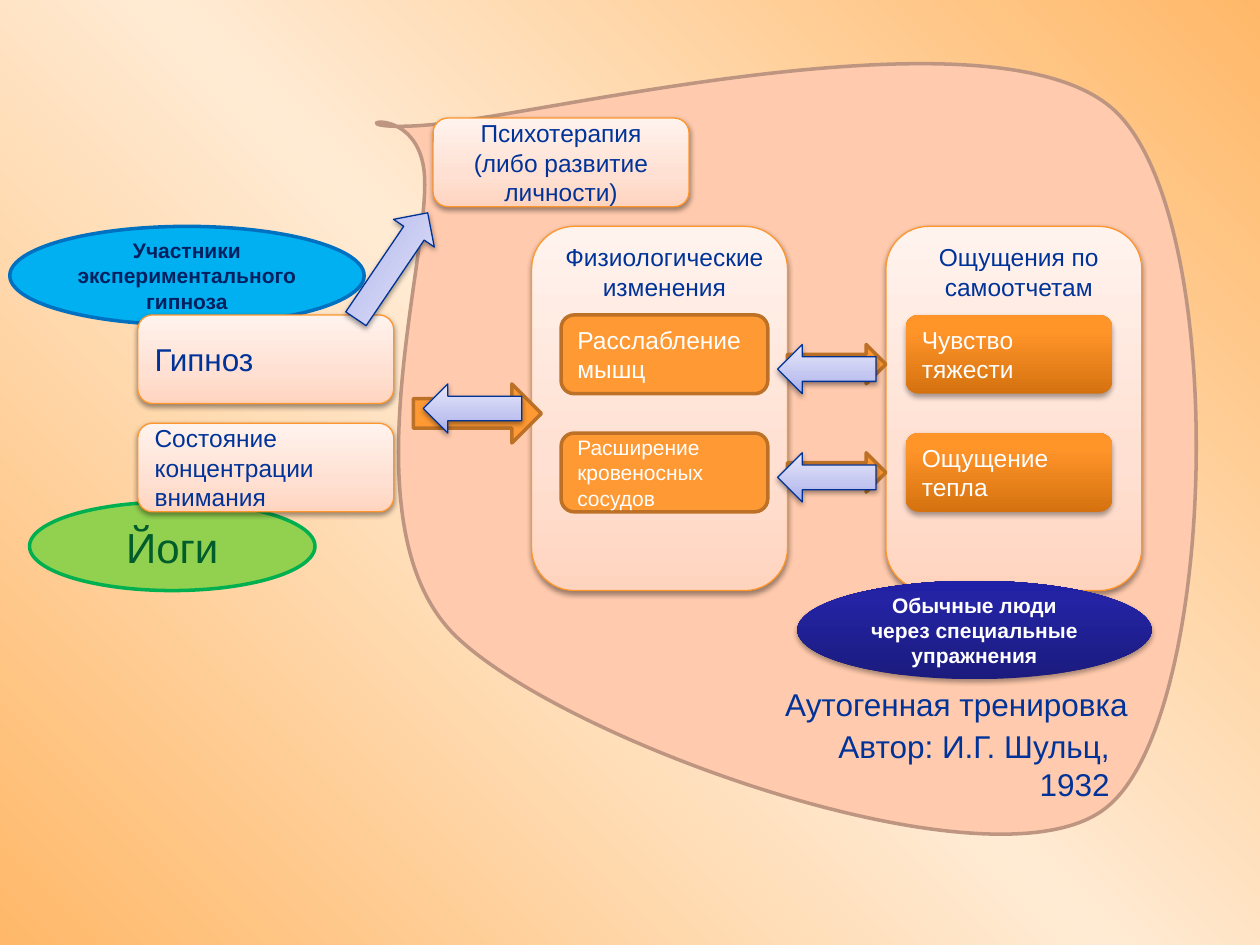
"""Build a slide relating hypnosis, concentration and autogenic training."""
from copy import deepcopy
from dataclasses import dataclass
from typing import Optional

from lxml import etree
from pptx import Presentation
from pptx import util as u
from pptx.dml.color import RGBColor
from pptx.enum import shapes, text
from pptx.oxml import ns

COLS = 128
HUES = {
    "sky": "00B0F0", "blue": "0070C0", "navy": "002060", "ink": "003399",
    "lime": "92D050", "green": "00B050", "pine": "005C2A",
    "orange": "FF9933", "rust": "BD7126", "amber": "FE962D",
    "peach": "FFCAAD", "clay": "BD9580", "edge": "003296",
    "white": "FFFFFF", "black": "000000",
}
GRADS = {
    "back": ((0, "FFB869"), (50, "FFEBD4"), (100, "FFB869")),
    "cream": ((0, "FFD4BF"), (35, "FFE0D2"), (100, "FFF3EE")),
    "fire": ((0, "D5720F"), (80, "FF9429"), (100, "FF952B")),
    "lilac": ((0, "A5ABEB"), (35, "C1C5F0"), (100, "E7E8FA")),
    "deep": ((0, "1B1B7E"), (80, "2323A3"), (100, "2020A6")),
}
KIND = shapes.MSO_SHAPE
OVAL, CARD = KIND.OVAL, KIND.ROUNDED_RECTANGLE
LEFT, RIGHT = KIND.LEFT_ARROW, KIND.RIGHT_ARROW
ALIGN = {"l": text.PP_ALIGN.LEFT, "c": text.PP_ALIGN.CENTER, "r": text.PP_ALIGN.RIGHT}


@dataclass(frozen=True)
class Shade:
    alpha: int
    dist: float
    blur: float = 3.1


@dataclass(frozen=True)
class Style:
    fill: str
    line: Optional[str] = None
    width: float = 0.75
    shade: Optional[Shade] = None


@dataclass(frozen=True)
class Label:
    words: str
    size: int
    hue: str = "ink"
    align: str = "l"
    bold: bool = False


@dataclass(frozen=True)
class Item:
    """A shape, or a text box when it has no kind, measured in grid cells."""
    col: float
    row: float
    wide: float
    high: float
    kind: Optional[int] = None
    style: Optional[Style] = None
    label: Optional[Label] = None
    turn: float = 0


SOFT, FIRM = Shade(38, 1.6), Shade(35, 1.8)
SKY = Style("sky", "blue", 2)
LIME = Style("lime", "green", 2)
CREAM = Style("cream", "amber", shade=SOFT)
FLAT = Style("orange", "rust", 2)
FIRE = Style("fire", shade=FIRM)
LILAC = Style("lilac", "edge", shade=SOFT)
DEEP = Style("deep", shade=FIRM)
BLOB = Style("peach", "clay", 2)

START = (337, 140)
CURVES = (
    ((333, 72), (250, 107), (342, 99)),
    ((433, 91), (798, 0), (887, 90)),
    ((977, 181), (966, 572), (878, 641)),
    ((791, 711), (454, 591), (364, 507)),
    ((273, 423), (341, 208), START),
)
ROWS = (35, 46)

ITEMS = [
    Item(1, 23, 36, 10, OVAL, SKY,
         Label("Участники экспериментального гипноза", 12, "navy", "c", True)),
    *[Item(col, 23, 26, 37, CARD, CREAM) for col in (90, 54)],
    Item(3, 51, 29, 9, OVAL, LIME, Label("Йоги", 24, "pine", "c")),
    Item(14, 32, 26, 9, CARD, CREAM, Label("Гипноз", 18)),
    Item(14, 43, 26, 9, CARD, CREAM, Label("Состояние концентрации внимания", 14)),
    Item(42, 39, 13, 6, RIGHT, FLAT),
    Item(57, 32, 21, 8, CARD, FLAT, Label("Расслабление мышц", 14, "white")),
    Item(57, 44, 21, 8, CARD, FLAT, Label("Расширение кровеносных сосудов", 12, "white")),
    *[Item(80, row, 10, 4, RIGHT, FLAT) for row in ROWS],
    Item(92, 32, 21, 8, CARD, FIRE, Label("Чувство тяжести", 14, "white")),
    Item(92, 44, 21, 8, CARD, FIRE, Label("Ощущение тепла", 14, "white")),
    *[Item(79, row, 10, 5, LEFT, LILAC) for row in ROWS],
    Item(43, 39, 10, 5, LEFT, LILAC),
    Item(55, 24, 25, 7.3, label=Label("Физиологические изменения", 14, align="c")),
    Item(91, 24, 25, 7.3, label=Label("Ощущения по самоотчетам", 14, align="c")),
    Item(81, 59, 36, 10, OVAL, DEEP,
         Label("Обычные люди через специальные упражнения", 12, "white", "c", True)),
    Item(33.3, 24.5, 13, 5, LEFT, LILAC, turn=124.1),
    Item(44, 12, 26, 9, CARD, CREAM,
         Label("Психотерапия (либо развитие личности)", 14, align="c")),
    Item(78.5, 69, 39, 5.1, label=Label("Аутогенная тренировка", 18)),
    Item(81, 73.2, 33, 9.1, label=Label("Автор: И.Г. Шульц, 1932", 18, align="r")),
]


def blend(fill, stops, angle: int) -> None:
    """Fill with a three-stop gradient at a counter-clockwise angle."""
    fill.gradient()
    fill.gradient_angle = angle
    last = fill.gradient_stops[1]._gs
    last.addnext(deepcopy(last))
    for stop, (share, hue) in zip(fill.gradient_stops, stops):
        stop.position = share / 100
        stop.color.rgb = RGBColor.from_string(hue)


def cast(shape, shade: Shade) -> None:
    """Give the shape a soft shadow straight below it."""
    effects = shape._element.spPr.find(ns.qn("a:effectLst"))
    outer = etree.SubElement(
        effects, ns.qn("a:outerShdw"), blurRad=str(u.Pt(shade.blur)),
        dist=str(u.Pt(shade.dist)), dir="5400000", rotWithShape="0")
    tint = etree.SubElement(outer, ns.qn("a:srgbClr"), val=HUES["black"])
    etree.SubElement(tint, ns.qn("a:alpha"), val=str(shade.alpha * 1000))


def paint(shape, style: Style) -> None:
    """Apply fill, outline and shadow."""
    shape.shadow.inherit = False
    if style.fill in GRADS:
        blend(shape.fill, GRADS[style.fill], 90)
    else:
        shape.fill.solid()
        shape.fill.fore_color.rgb = RGBColor.from_string(HUES[style.fill])
    if style.line:
        shape.line.color.rgb = RGBColor.from_string(HUES[style.line])
        shape.line.width = u.Pt(style.width)
    else:
        shape.line.fill.background()
    if style.shade:
        cast(shape, style.shade)


def write(frame, label: Label) -> None:
    """Put the label into a text frame."""
    frame.word_wrap = True
    para = frame.paragraphs[0]
    para.text = label.words
    para.alignment = ALIGN[label.align]
    font = para.font
    font.name, font.size, font.bold = "Arial", u.Pt(label.size), label.bold
    font.color.rgb = RGBColor.from_string(HUES[label.hue])


def draw(slide, item: Item, cell: float) -> None:
    """Place one item on the grid."""
    box = [u.Emu(round(n * cell)) for n in (item.col, item.row, item.wide, item.high)]
    if item.kind is None:
        shape = slide.shapes.add_textbox(*box)
        shape.text_frame.auto_size = text.MSO_AUTO_SIZE.SHAPE_TO_FIT_TEXT
    else:
        shape = slide.shapes.add_shape(item.kind, *box)
        paint(shape, item.style)
        shape.rotation = item.turn
    if item.label:
        write(shape.text_frame, item.label)


def bulge(slide) -> None:
    """Draw the curved field, with points in hundredths of an inch."""
    pen = slide.shapes.build_freeform(*START, scale=u.Inches(1) / 100)
    pen.add_line_segments([point for curve in CURVES for point in curve], close=True)
    shape = pen.convert_to_shape()
    legs = list(shape._element.iter(ns.qn("a:lnTo")))
    for first in range(0, len(legs), 3):
        trio = legs[first:first + 3]
        curve = etree.Element(ns.qn("a:cubicBezTo"))
        trio[0].addprevious(curve)
        for leg in trio:
            curve.append(leg[0])
            leg.getparent().remove(leg)
    paint(shape, BLOB)


def main() -> None:
    """Build and save the slide."""
    deck = Presentation()
    deck.slide_width, deck.slide_height = u.Inches(10), u.Inches(7.5)
    slide = deck.slides.add_slide(deck.slide_layouts[6])
    blend(slide.background.fill, GRADS["back"], 45)
    bulge(slide)
    for item in ITEMS:
        draw(slide, item, deck.slide_width / COLS)
    deck.save("out.pptx")


if __name__ == "__main__":
    main()
